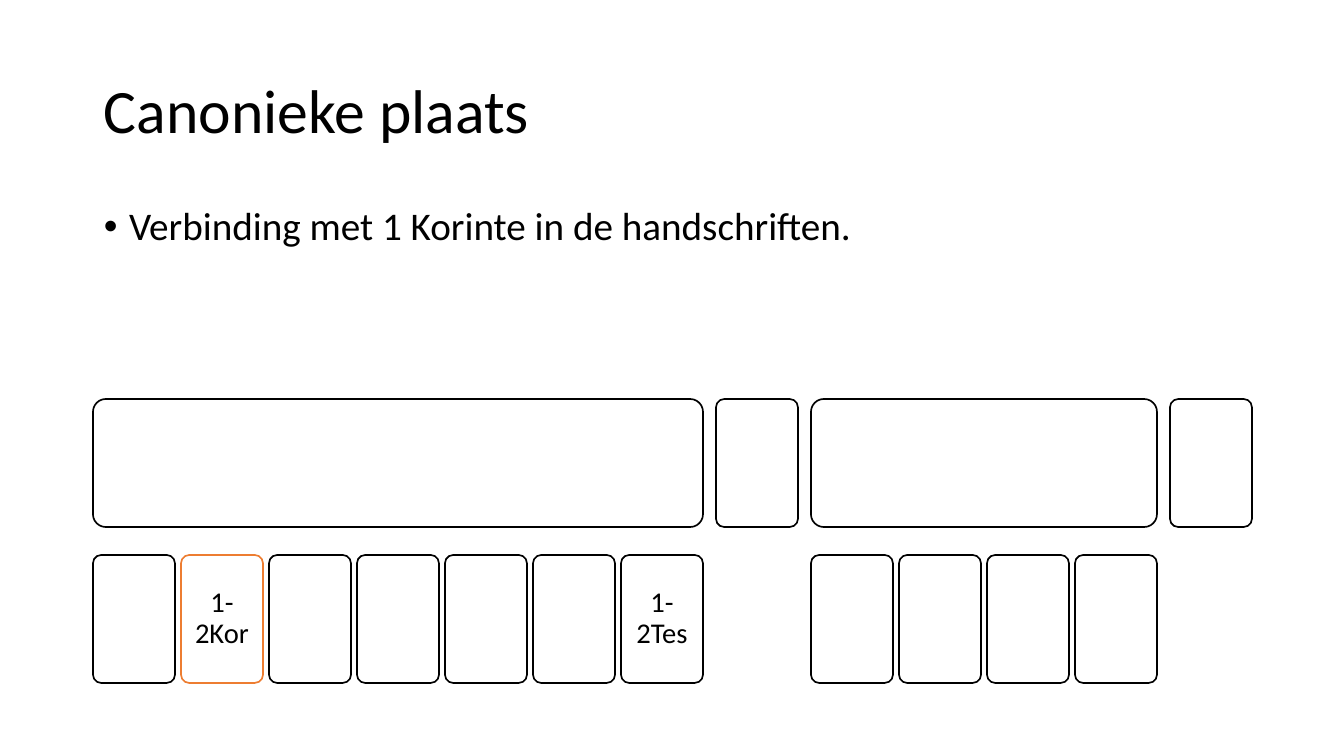
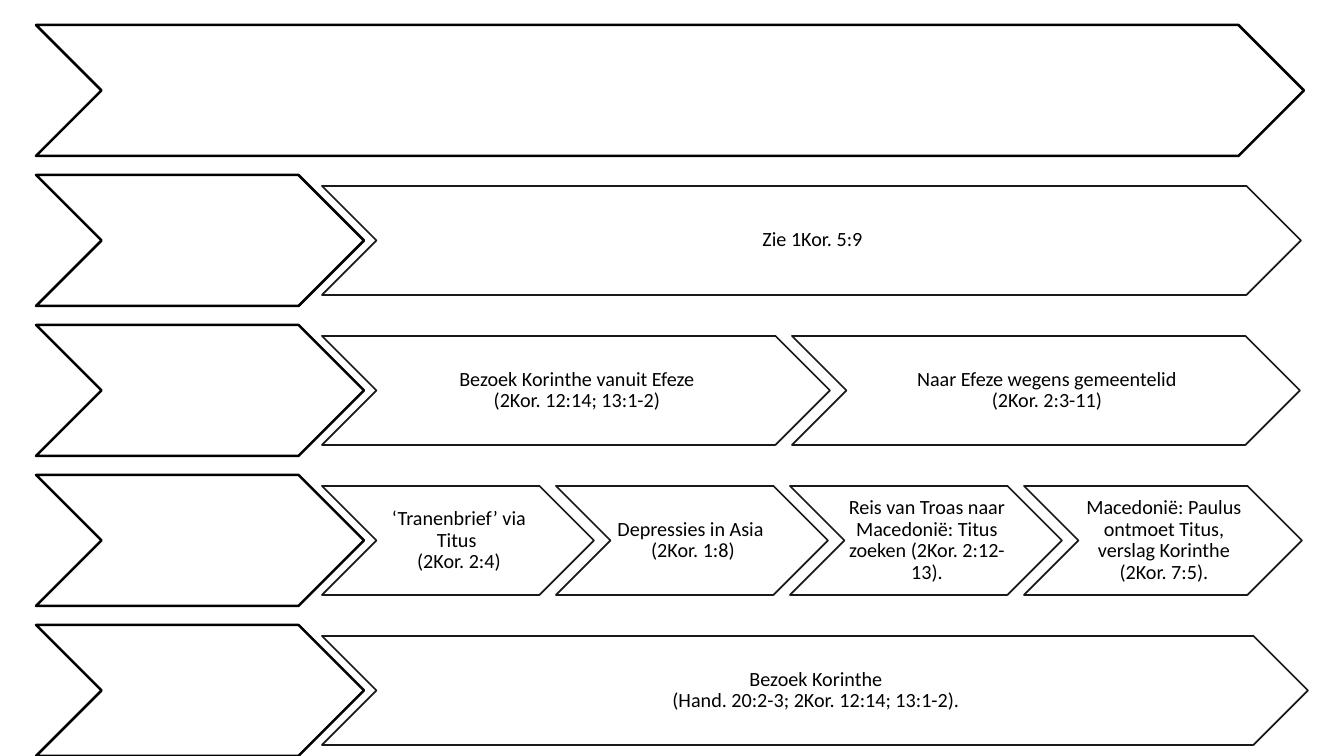
from dataclasses import dataclass

from pptx import Presentation
from pptx import util as u
from pptx.dml import color
from pptx.enum import shapes, text
from pptx.oxml import xmlchemy as xml

SCALE = u.Inches(1) / 121
WIDE, HIGH = 1344, 756


@dataclass(frozen=True)
class Theme:
    font: str = "Calibri"
    ink: str = "000000"
    paper: str = "FFFFFF"
    accent: str = "ED7D31"
    title: float = 36.7
    body: float = 23.3
    book: float = 17
    event: float = 12
    thin: float = 1
    thick: float = 1.5
    alpha: int = 90


THEME = Theme()
KIND = shapes.MSO_SHAPE
ALIGN = text.PP_ALIGN
ANCHOR = text.MSO_ANCHOR


def px(n):
    return round(n * SCALE)


def rgb(code):
    return color.RGBColor.from_string(code)


def apply(item, values):
    for name, value in values.items():
        setattr(item, name, value)


def place(item, box):
    apply(item, dict(zip(("left", "top", "width", "height"), map(px, box))))


def write(frame, words, size, align, anchor, pads, before=0):
    sides = ("margin_left", "margin_top", "margin_right", "margin_bottom")
    apply(frame, dict(zip(sides, map(px, pads))))
    apply(frame, {"word_wrap": True, "auto_size": text.MSO_AUTO_SIZE.NONE,
                  "vertical_anchor": anchor})
    para = frame.paragraphs[0]
    apply(para, {"text": words, "alignment": align, "line_spacing": 0.9,
                 "space_before": u.Pt(before)})
    for run in para.runs:
        apply(run.font, {"name": THEME.font, "size": u.Pt(size)})
        run.font.color.rgb = rgb(THEME.ink)
    return para


def fade(shape):
    for tint in shape._element.spPr.xpath(".//a:srgbClr"):
        alpha = xml.OxmlElement("a:alpha")
        alpha.set("val", str(THEME.alpha * 1000))
        tint.append(alpha)


def draw(slide, kind, box, edge=THEME.ink, weight=THEME.thin):
    shape = slide.shapes.add_shape(kind, *map(px, box))
    shape.shadow.inherit = False
    shape.fill.solid()
    shape.fill.fore_color.rgb = rgb(THEME.paper)
    shape.line.color.rgb = rgb(edge)
    shape.line.width = u.Pt(weight)
    return shape


def head(slide, words, box):
    title = slide.shapes.title
    place(title, box)
    write(title.text_frame, words, THEME.title, ALIGN.LEFT, ANCHOR.MIDDLE,
          (12, 6, 12, 6))


def points(slide, words, box):
    body = slide.placeholders[1]
    place(body, box)
    para = write(body.text_frame, words, THEME.body, ALIGN.LEFT, ANCHOR.TOP,
                 (12, 6, 12, 6), 8.3)
    props = para._p.get_or_add_pPr()
    for name, value in (("marL", px(25)), ("indent", px(-25))):
        props.set(name, str(value))


def card(slide, box, words="", edge=THEME.ink):
    shape = draw(slide, KIND.ROUNDED_RECTANGLE, box, edge)
    shape.adjustments[0] = 0.1
    if words:
        write(shape.text_frame, words, THEME.book, ALIGN.CENTER,
              ANCHOR.MIDDLE, (8, 8, 8, 8))


def canon(slide, groups, box):
    left, top, width, height = box
    cell, step, gap, tall = 82, 88, 13, 128
    low = top + height - tall
    for books in groups:
        span = step * max(len(books) - 1, 0) + cell
        card(slide, (left, top, span, tall))
        for i, book in enumerate(books):
            edge = THEME.accent if book == "1-2Kor" else THEME.ink
            card(slide, (left + i * step, low, cell, tall), book, edge)
        left += span + gap


def event(slide, box, words):
    shape = draw(slide, KIND.CHEVRON, box)
    fade(shape)
    write(shape.text_frame, words, THEME.event, ALIGN.CENTER,
          ANCHOR.MIDDLE, (2, 1, 0, 1))


def track(slide, events, box):
    left, top, width, height = box
    lead, start, inset, lap = 328, 286, 11, 38
    span = lead if events else width
    draw(slide, KIND.CHEVRON, (left, top, span, height), weight=THEME.thick)
    x = left + start
    for words, wide in events:
        event(slide, (x, top + inset, wide, height - 2 * inset), words)
        x += wide - lap


def place_slide(deck):
    slide = deck.slides.add_slide(deck.slide_layouts[1])
    head(slide, "Canonieke plaats", (92, 40, 1159, 146))
    points(slide, "Verbinding met 1 Korinte in de handschriften.",
           (92, 201, 1159, 480))
    paul = ["", "1-2Kor", "", "", "", "", "1-2Tes"]
    canon(slide, [paul, [], [""] * 4, []], (93, 399, 1159, 284))


def time_slide(deck):
    slide = deck.slides.add_slide(deck.slide_layouts[6])
    tracks = [
        [],
        [("Zie 1Kor. 5:9", 979)],
        [("Bezoek Korinthe vanuit Efeze\n(2Kor. 12:14; 13:1-2)", 508),
         ("Naar Efeze wegens gemeentelid\n(2Kor. 2:3-11)", 508)],
        [("‘Tranenbrief’ via Titus \n(2Kor. 2:4)", 272),
         ("Depressies in Asia \n(2Kor. 1:8)", 272),
         ("Reis van Troas naar Macedonië: Titus zoeken (2Kor. 2:12-13).", 272),
         ("Macedonië: Paulus ontmoet Titus, verslag Korinthe (2Kor. 7:5).",
          278)],
        [("Bezoek Korinthe\n(Hand. 20:2-3; 2Kor. 12:14; 13:1-2).", 986)],
    ]
    for i, events in enumerate(tracks):
        track(slide, events, (36, 25 + i * 150, 1268, 131))


def main():
    deck = Presentation()
    apply(deck, {"slide_width": px(WIDE), "slide_height": px(HIGH)})
    place_slide(deck)
    time_slide(deck)
    deck.save("out.pptx")


if __name__ == "__main__":
    main()
